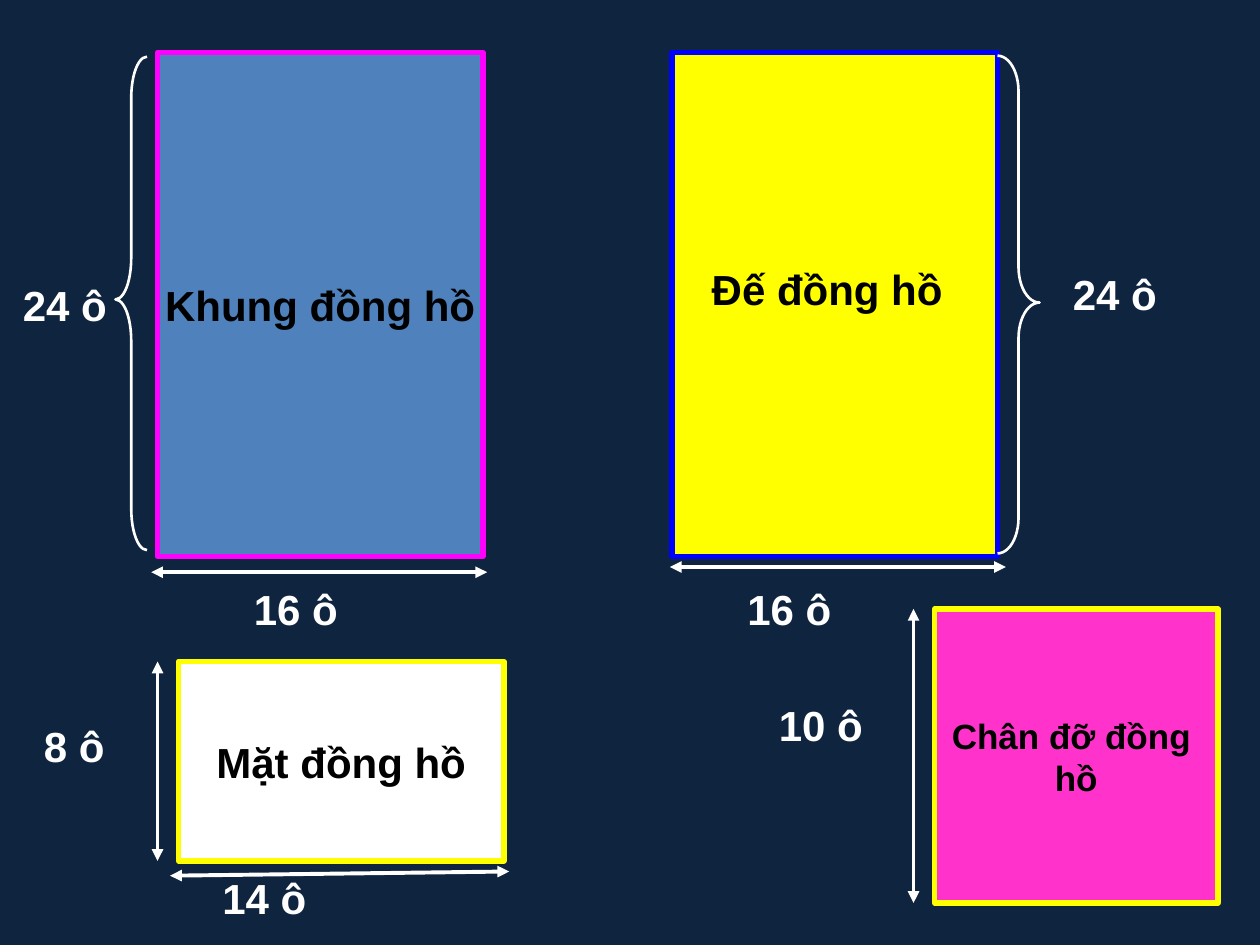
from dataclasses import dataclass
from typing import NamedTuple

from lxml.etree import SubElement
from pptx import Presentation
from pptx.dml.color import RGBColor
from pptx.enum.shapes import MSO_CONNECTOR, MSO_SHAPE
from pptx.enum.text import MSO_ANCHOR, MSO_AUTO_SIZE, PP_ALIGN
from pptx.oxml.ns import qn
from pptx.util import Inches, Pt


@dataclass(frozen=True)
class Theme:
    font: str = "Arial"
    navy: str = "0F243E"
    blue: str = "4F81BD"
    magenta: str = "FF00FF"
    pink: str = "FF33CC"
    yellow: str = "FFFF00"
    deep_blue: str = "0000FF"
    white: str = "FFFFFF"
    black: str = "000000"
    size: int = 24
    small: int = 20
    border: float = 3
    arrow: float = 2.25
    brace: float = 1.5


THEME = Theme()
COLUMNS, ROWS = 120, 90  # square grid, 12 cells to the inch
LABEL_SIZE = (12, 6)


class Box(NamedTuple):
    left: float
    top: float
    width: float
    height: float

    def inside(self, x, y, width, height):
        """A box placed relative to this one."""
        return Box(self.left + x, self.top + y, width, height)


def cells(*values):
    return [Inches(value / 12) for value in values]


def apply(target, formats):
    for name, value in formats.items():
        setattr(target, name, value)


def set_line(line, color, width):
    line.color.rgb = RGBColor.from_string(color)
    line.width = Pt(width)


def write(frame, lines, color, size=THEME.size, align=PP_ALIGN.LEFT, **formats):
    apply(frame, formats)
    for number, words in enumerate(lines):
        paragraph = frame.paragraphs[0] if number == 0 else frame.add_paragraph()
        paragraph.alignment = align
        run = paragraph.add_run()
        run.text = words
        apply(run.font, {"name": THEME.font, "size": Pt(size), "bold": True})
        run.font.color.rgb = RGBColor.from_string(color)


def add_text(slide, box, words, color, wrap=True):
    frame = slide.shapes.add_textbox(*cells(*box)).text_frame
    write(frame, [words], color, word_wrap=wrap,
          auto_size=MSO_AUTO_SIZE.SHAPE_TO_FIT_TEXT)


def add_arrow(slide, box, start, end):
    ends = [value for x, y in (start, end)
            for value in cells(box.left + x, box.top + y)]
    arrow = slide.shapes.add_connector(MSO_CONNECTOR.STRAIGHT, *ends)
    set_line(arrow.line, THEME.white, THEME.arrow)
    # Arrowheads at both ends, no shadow
    outline = arrow.line._get_or_add_ln()
    for tag in ("a:headEnd", "a:tailEnd"):
        SubElement(outline, qn(tag), type="triangle")
    SubElement(arrow._element.spPr, qn("a:effectLst"))


def add_brace(slide, box, adjustments, rotation):
    brace = slide.shapes.add_shape(MSO_SHAPE.LEFT_BRACE, *cells(*box))
    brace.shadow.inherit = False
    brace.fill.background()
    set_line(brace.line, THEME.white, THEME.brace)
    brace.rotation = rotation
    for number, value in enumerate(adjustments):
        brace.adjustments[number] = value


def add_piece(slide, box, fill, border, name=(), size=THEME.size,
              caption=None, brace=None, arrows=(), labels=()):
    """One paper piece of the clock, with its measures around it."""
    # Sheet and its name
    sheet = slide.shapes.add_shape(MSO_SHAPE.RECTANGLE, *cells(*box))
    sheet.shadow.inherit = False
    sheet.fill.solid()
    sheet.fill.fore_color.rgb = RGBColor.from_string(fill)
    set_line(sheet.line, border, THEME.border)
    write(sheet.text_frame, name, THEME.black, size, PP_ALIGN.CENTER,
          word_wrap=False, vertical_anchor=MSO_ANCHOR.MIDDLE)
    # Measuring marks
    if brace:
        place, adjustments, rotation = brace
        add_brace(slide, box.inside(*place), adjustments, rotation)
    for start, end in arrows:
        add_arrow(slide, box, start, end)
    # Measures
    for words, x, y in labels:
        add_text(slide, box.inside(x, y, *LABEL_SIZE), words, THEME.white)
    if caption:
        words, place = caption
        add_text(slide, box.inside(*place), words, THEME.black, wrap=False)


PIECES = [
    # Clock frame
    dict(box=Box(15, 5, 31, 48), fill=THEME.blue, border=THEME.magenta,
         name=["Khung đồng hồ"],
         brace=((-4, 0.4, 3, 47), (1.306, 0.492), 0),
         arrows=[((-0.6, 49.5), (31.4, 49.5))],
         labels=[("24 ô", -14, 21), ("16 ô", 8, 50)]),
    # Clock face
    dict(box=Box(17, 63, 31, 19), fill=THEME.white, border=THEME.yellow,
         name=["Mặt đồng hồ"],
         arrows=[((-2, 0), (-2, 19)), ((-0.8, 20.4), (31.5, 20))],
         labels=[("8 ô", -14, 5), ("14 ô", 3, 19.5)]),
    # Clock stand
    dict(box=Box(89, 58, 27, 28), fill=THEME.pink, border=THEME.yellow,
         name=["Chân đỡ đồng ", "hồ"], size=THEME.small,
         arrows=[((-2, 0), (-2, 28))],
         labels=[("10 ô", -16, 8)]),
    # Clock base
    dict(box=Box(64, 5, 31, 48), fill=THEME.yellow, border=THEME.deep_blue,
         caption=("Đế đồng hồ", (2.6, 19.5, 24.4, 6)),
         brace=((31, 0.3, 4, 47.4), (0.845, 0.504), 180),
         arrows=[((-0.2, 49), (31.8, 49))],
         labels=[("24 ô", 37, 20), ("16 ô", 6, 50)]),
]


def main():
    deck = Presentation()
    deck.slide_width, deck.slide_height = cells(COLUMNS, ROWS)
    slide = deck.slides.add_slide(deck.slide_layouts[6])
    slide.background.fill.solid()
    slide.background.fill.fore_color.rgb = RGBColor.from_string(THEME.navy)
    for piece in PIECES:
        add_piece(slide, **piece)
    deck.save("out.pptx")


if __name__ == "__main__":
    main()
